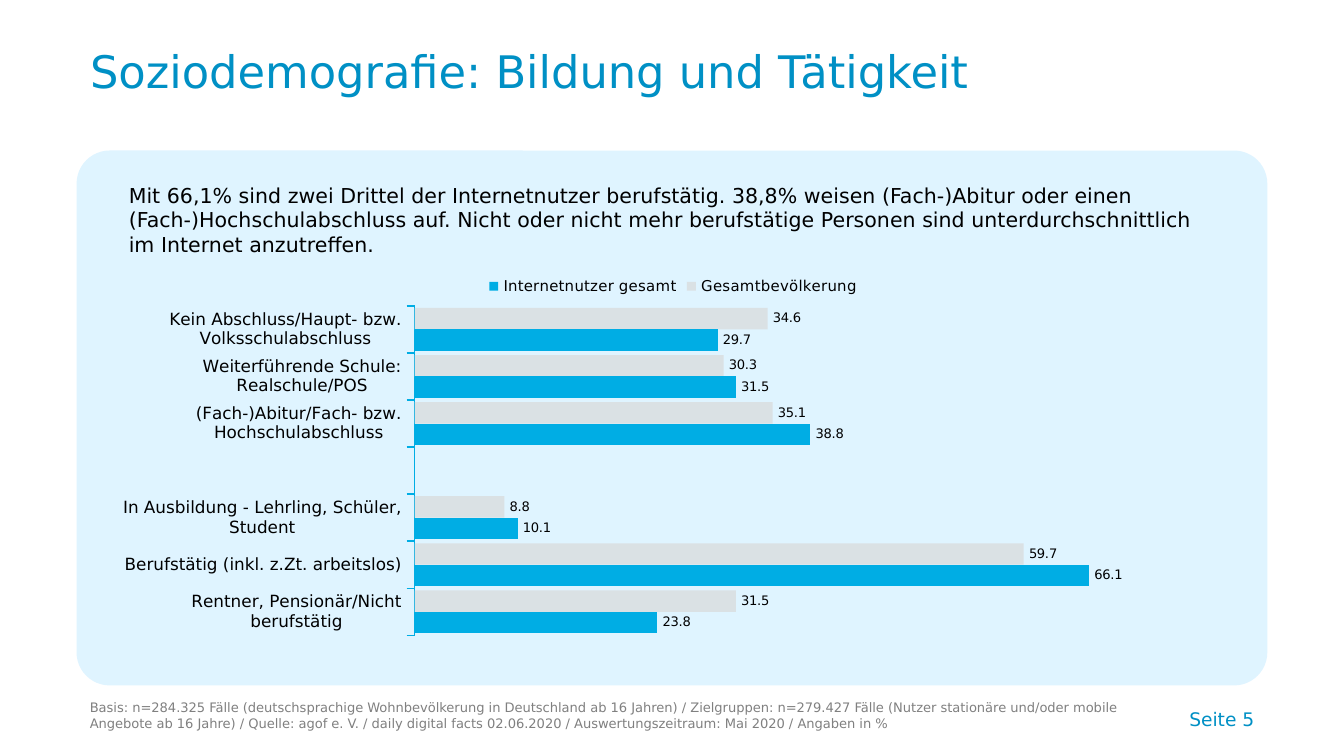
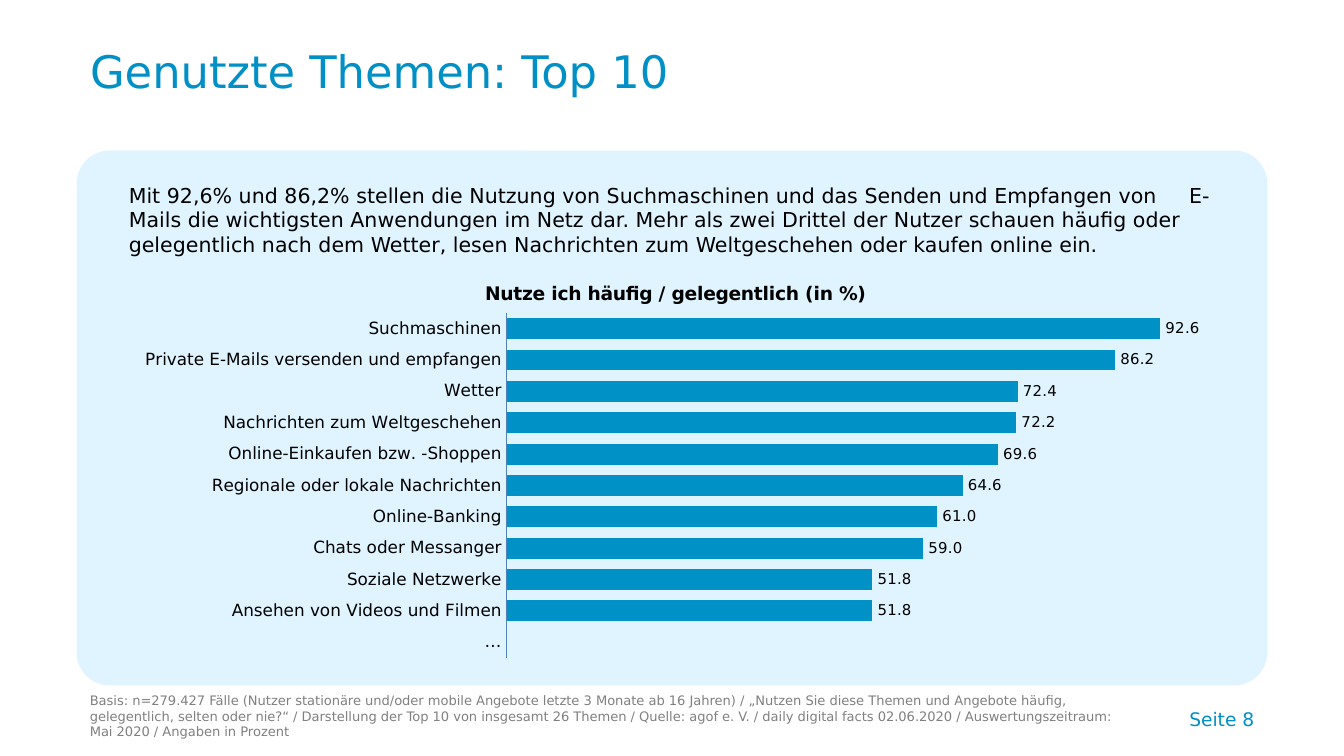
from dataclasses import dataclass
from typing import Optional

from lxml import etree
from pptx import Presentation
from pptx.chart.chart import Chart
from pptx.chart.data import CategoryChartData
from pptx.dml.color import RGBColor
from pptx.enum.chart import XL_CHART_TYPE as ChartType
from pptx.enum.chart import XL_LABEL_POSITION as LabelPosition
from pptx.enum.chart import XL_LEGEND_POSITION as LegendPosition
from pptx.enum.chart import XL_TICK_MARK as TickMark
from pptx.enum.shapes import MSO_SHAPE as Preset
from pptx.enum.text import MSO_ANCHOR as Anchor
from pptx.enum.text import MSO_AUTO_SIZE as AutoSize
from pptx.enum.text import PP_ALIGN as Align
from pptx.oxml.ns import qn
from pptx.slide import Slide
from pptx.text.text import Font, TextFrame
from pptx.util import Inches, Pt

FONT = "DejaVu Sans"
COLORS = {
    "heading": "0090C5",
    "panel": "DFF4FF",
    "text": "000000",
    "source": "808080",
    "users": "00ADE4",
    "population": "D9D9D9",
    "topics": "0092C6",
    "topic_axis": "4F81BD",
}
VALUE_FORMAT = "#,##0.0"
Box = tuple[float, float, float, float]

PANEL_BOX: Box = (0.57, 1.12, 8.86, 3.98)
TITLE_BOX: Box = (0.57, 0.28, 7.33, 0.56)
PAGE_BOX: Box = (6.54, 5.1, 2.89, 0.38)
MESSAGE_BOX: Box = (0.86, 1.31, 8.31, 0.64)


@dataclass
class BarSeries:
    name: str
    values: list[Optional[float]]
    color: str
    opacity: int = 100


@dataclass
class BarChart:
    box: Box
    plot: Box
    categories: list[str]
    series: list[BarSeries]
    maximum: int
    gap: int
    label_size: int
    axis_color: str
    tick_mark: TickMark
    title: str = ""
    legend: bool = False


@dataclass
class Page:
    number: int
    title: str
    message: str
    source: str
    source_box: Box
    chart: BarChart
    tab_stop: Optional[float] = None


PAGES = [
    Page(
        number=5,
        title="Soziodemografie: Bildung und Tätigkeit",
        message=(
            "Mit 66,1% sind zwei Drittel der Internetnutzer berufstätig. 38,8% weisen "
            "(Fach-)Abitur oder einen (Fach-)Hochschulabschluss auf. Nicht oder nicht mehr "
            "berufstätige Personen sind unterdurchschnittlich im Internet anzutreffen."
        ),
        source=(
            "Basis: n=284.325 Fälle (deutschsprachige Wohnbevölkerung in Deutschland ab 16 "
            "Jahren) / Zielgruppen: n=279.427 Fälle (Nutzer stationäre und/oder mobile Angebote "
            "ab 16 Jahre) / Quelle: agof e. V. / daily digital facts 02.06.2020 / "
            "Auswertungszeitraum: Mai 2020 / Angaben in %"
        ),
        source_box=(0.57, 5.1, 7.88, 0.39),
        chart=BarChart(
            box=(0.86, 1.95, 8.3, 3.02),
            plot=(0.268, 0.108, 0.732, 0.812),
            categories=[
                "Kein Abschluss/Haupt- bzw. Volksschulabschluss",
                "Weiterführende Schule: Realschule/POS",
                "(Fach-)Abitur/Fach- bzw. Hochschulabschluss",
                "",
                "In Ausbildung - Lehrling, Schüler, Student",
                "Berufstätig (inkl. z.Zt. arbeitslos)",
                "Rentner, Pensionär/Nicht berufstätig",
            ],
            series=[
                BarSeries("Gesamtbevölkerung", [34.6, 30.3, 35.1, None, 8.8, 59.7, 31.5],
                          "population", opacity=70),
                BarSeries("Internetnutzer gesamt", [29.7, 31.5, 38.8, None, 10.1, 66.1, 23.8],
                          "users"),
            ],
            maximum=80,
            gap=20,
            label_size=7,
            axis_color="users",
            tick_mark=TickMark.OUTSIDE,
            legend=True,
        ),
    ),
    Page(
        number=8,
        title="Genutzte Themen: Top 10",
        message=(
            "Mit 92,6% und 86,2% stellen die Nutzung von Suchmaschinen und das Senden und "
            "Empfangen von\tE-Mails die wichtigsten Anwendungen im Netz dar. Mehr als zwei "
            "Drittel der Nutzer schauen häufig oder gelegentlich nach dem Wetter, lesen "
            "Nachrichten zum Weltgeschehen oder kaufen online ein."
        ),
        tab_stop=7.89,
        source=(
            "Basis: n=279.427 Fälle (Nutzer stationäre und/oder mobile Angebote letzte 3 Monate "
            "ab 16 Jahren) / „Nutzen Sie diese Themen und Angebote häufig, gelegentlich, selten "
            "oder nie?“ / Darstellung der Top 10 von insgesamt 26 Themen / Quelle: agof e. V. / "
            "daily digital facts 02.06.2020 / Auswertungszeitraum: Mai 2020 / Angaben in Prozent"
        ),
        source_box=(0.57, 5.16, 7.91, 0.39),
        chart=BarChart(
            box=(0.87, 1.96, 8.31, 2.94),
            plot=(0.349, 0.126, 0.632, 0.874),
            categories=[
                "Suchmaschinen",
                "Private E-Mails versenden und empfangen",
                "Wetter",
                "Nachrichten zum Weltgeschehen",
                "Online-Einkaufen bzw. -Shoppen",
                "Regionale oder lokale Nachrichten",
                "Online-Banking",
                "Chats oder Messanger",
                "Soziale Netzwerke",
                "Ansehen von Videos und Filmen",
                "…",
            ],
            series=[
                BarSeries("Series 1", [92.6, 86.2, 72.4, 72.2, 69.6, 64.6, 61, 59, 51.8, 51.8, None],
                          "topics"),
            ],
            maximum=100,
            gap=50,
            label_size=8,
            axis_color="topic_axis",
            tick_mark=TickMark.NONE,
            title="Nutze ich häufig / gelegentlich (in %)",
        ),
    ),
]


def rgb(name: str) -> RGBColor:
    return RGBColor.from_string(COLORS[name])


def inches(box: Box) -> list[Inches]:
    return [Inches(length) for length in box]


def style_font(font: Font, size: float, color: str = "text") -> None:
    font.name = FONT
    font.size = Pt(size)
    font.color.rgb = rgb(color)


def fill_text(frame: TextFrame, text: str, size: float, color: str, anchor: Anchor = Anchor.TOP,
              align: Align = Align.LEFT, tab_stop: Optional[float] = None) -> None:
    frame.word_wrap = True
    frame.auto_size = AutoSize.NONE
    frame.vertical_anchor = anchor
    paragraph = frame.paragraphs[0]
    paragraph.text = text
    paragraph.alignment = align
    if tab_stop is not None:
        properties = paragraph._p.get_or_add_pPr()
        tabs = etree.SubElement(properties, qn("a:tabLst"))
        etree.SubElement(tabs, qn("a:tab"), pos=str(Inches(tab_stop)), algn="l")
    style_font(paragraph.font, size, color)


def add_text(slide: Slide, box: Box, text: str, size: float, color: str,
             anchor: Anchor = Anchor.TOP, align: Align = Align.LEFT,
             tab_stop: Optional[float] = None) -> None:
    frame = slide.shapes.add_textbox(*inches(box)).text_frame
    fill_text(frame, text, size, color, anchor, align, tab_stop)


def add_panel(slide: Slide) -> None:
    panel = slide.shapes.add_shape(Preset.ROUNDED_RECTANGLE, *inches(PANEL_BOX))
    panel.adjustments[0] = 0.062
    panel.shadow.inherit = False
    panel.fill.solid()
    panel.fill.fore_color.rgb = rgb("panel")
    panel.line.fill.background()


def set_title(slide: Slide, text: str) -> None:
    title = slide.shapes.title
    title.left, title.top, title.width, title.height = inches(TITLE_BOX)
    fill_text(title.text_frame, text, 24, "heading", Anchor.MIDDLE)
    title.text_frame.paragraphs[0].line_spacing = 0.8


def place_plot(chart: Chart, plot: Box) -> None:
    """Fix the inner plot area, in fractions of the chart."""
    plot_area = chart.element.find(f"{qn('c:chart')}/{qn('c:plotArea')}")
    for layout in plot_area.findall(qn("c:layout")):
        plot_area.remove(layout)
    layout = etree.Element(qn("c:layout"))
    plot_area.insert(0, layout)
    manual = etree.SubElement(layout, qn("c:manualLayout"))
    settings = [("layoutTarget", "inner"), ("xMode", "edge"), ("yMode", "edge")]
    settings += zip("xywh", map(str, plot))
    for tag, value in settings:
        etree.SubElement(manual, qn(f"c:{tag}"), val=value)


def style_axes(chart: Chart, design: BarChart) -> None:
    category_axis = chart.category_axis
    category_axis.reverse_order = True
    category_axis.has_major_gridlines = False
    category_axis.major_tick_mark = design.tick_mark
    category_axis.minor_tick_mark = TickMark.NONE
    category_axis.format.line.color.rgb = rgb(design.axis_color)
    category_axis.format.line.width = Pt(0.75)
    style_font(category_axis.tick_labels.font, 9)

    value_axis = chart.value_axis
    value_axis.minimum_scale = 0
    value_axis.maximum_scale = design.maximum
    value_axis.has_major_gridlines = False
    value_axis.visible = False


def style_bars(chart: Chart, design: BarChart) -> None:
    plot = chart.plots[0]
    plot.gap_width = design.gap
    plot.overlap = 0
    plot.vary_by_categories = False
    for series, bars in zip(plot.series, design.series):
        fill = series.format.fill
        fill.solid()
        fill.fore_color.rgb = rgb(bars.color)
        if bars.opacity < 100:
            color = next(series._element.iter(qn("a:srgbClr")))
            etree.SubElement(color, qn("a:alpha"), val=str(bars.opacity * 1000))
        labels = series.data_labels
        labels.show_value = True
        labels.number_format = VALUE_FORMAT
        labels.number_format_is_linked = False
        labels.position = LabelPosition.OUTSIDE_END
        style_font(labels.font, design.label_size)


def add_bar_chart(slide: Slide, design: BarChart) -> None:
    data = CategoryChartData(number_format=VALUE_FORMAT)
    data.categories = design.categories
    for bars in design.series:
        data.add_series(bars.name, bars.values)
    chart = slide.shapes.add_chart(ChartType.BAR_CLUSTERED, *inches(design.box), data).chart
    style_font(chart.font, 9)
    chart.has_title = bool(design.title)
    if design.title:
        paragraph = chart.chart_title.text_frame.paragraphs[0]
        paragraph.text = design.title
        style_font(paragraph.font, 10)
        paragraph.font.bold = True
        chart.chart_title.include_in_layout = False
    chart.has_legend = design.legend
    if design.legend:
        chart.legend.position = LegendPosition.TOP
        chart.legend.include_in_layout = False
        style_font(chart.legend.font, 8)
    style_axes(chart, design)
    style_bars(chart, design)
    place_plot(chart, design.plot)


def main() -> None:
    presentation = Presentation()
    presentation.slide_width = Inches(10)
    presentation.slide_height = Inches(10 * 9 / 16)
    title_only = presentation.slide_layouts.get_by_name("Title Only")
    for page in PAGES:
        slide = presentation.slides.add_slide(title_only)
        set_title(slide, page.title)
        add_panel(slide)
        add_text(slide, PAGE_BOX, f"Seite {page.number}", 10, "heading", Anchor.BOTTOM, Align.RIGHT)
        add_bar_chart(slide, page.chart)
        add_text(slide, MESSAGE_BOX, page.message, 11, "text", tab_stop=page.tab_stop)
        add_text(slide, page.source_box, page.source, 7, "source", Anchor.BOTTOM)
    presentation.save("out.pptx")


if __name__ == "__main__":
    main()
